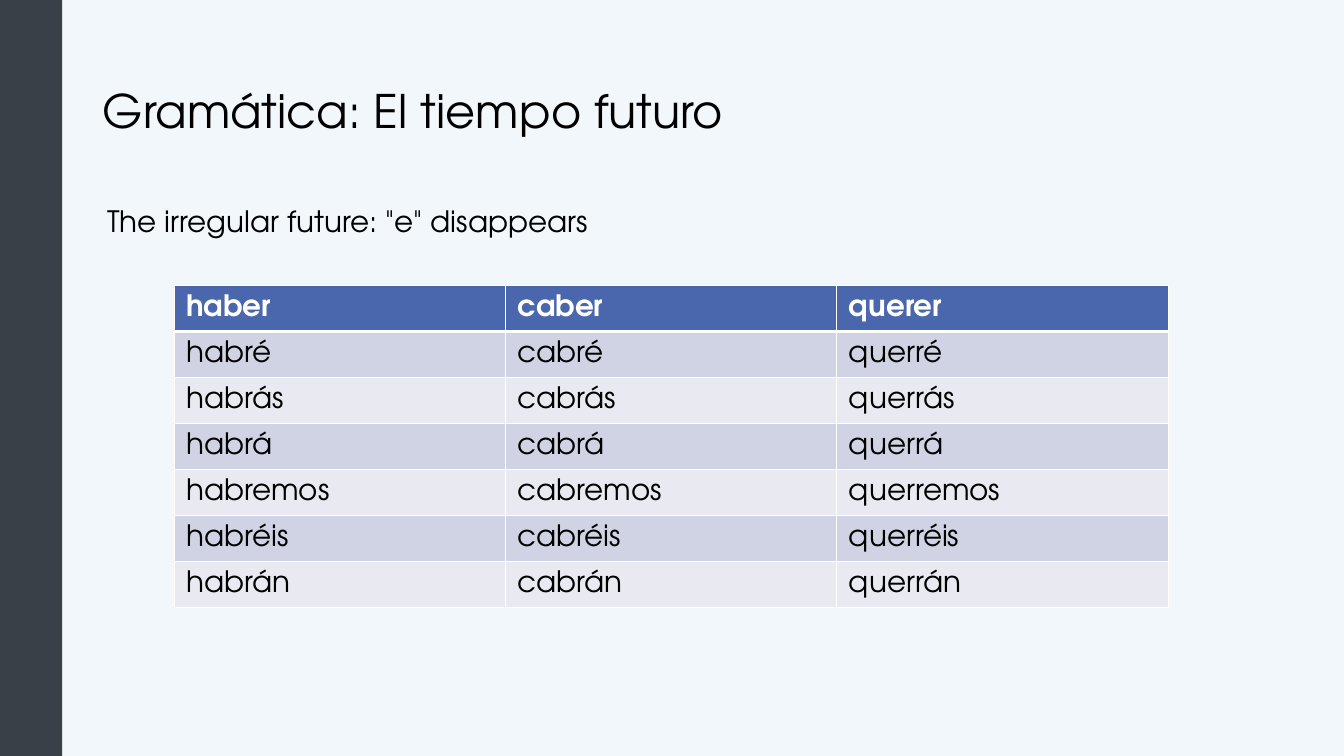
from dataclasses import dataclass

from lxml.etree import SubElement as Sub
from pptx import Presentation
from pptx.dml.color import RGBColor as Rgb
from pptx.enum.shapes import MSO_SHAPE as Kind
from pptx.enum.text import MSO_ANCHOR as Anchor, PP_ALIGN as Align
from pptx.oxml.ns import qn
from pptx.util import Cm, Pt

TITLE = "Gramática: El tiempo futuro"
RULE = 'The irregular future: "e" disappears'
VERBS = [
    ("haber", "caber", "querer"),
    ("habré", "cabré", "querré"),
    ("habrás", "cabrás", "querrás"),
    ("habrá", "cabrá", "querrá"),
    ("habremos", "cabremos", "querremos"),
    ("habréis", "cabréis", "querréis"),
    ("habrán", "cabrán", "querrán"),
]
WIDE, HIGH = 33.87, 19.05
BAR = 1.57
LEFT, SPAN = 2.34, 29.21
GRID = (4.39, 7.19)
COL, ROW = 8.35, 1.16


@dataclass(frozen=True)
class Theme:
    """Colours, font and type sizes."""
    back: str = "F1F7FB"
    bar: str = "3A4047"
    ink: str = "000000"
    light: str = "FFFFFF"
    head: str = "4A66AC"
    bands: tuple = ("E9EAF1", "D0D3E3")
    font: str = "TeX Gyre Adventor"
    big: int = 33
    text: int = 21


LOOK = Theme()


def paint(fill, tone):
    """Give a fill one solid colour."""
    fill.solid()
    fill.fore_color.rgb = Rgb.from_string(tone)


def write(frame, text, size, tone=LOOK.ink, bold=False, pitch=None):
    """Write one run into the first paragraph of a frame."""
    para = frame.paragraphs[0]
    para.alignment = Align.LEFT
    if pitch:
        para.line_spacing = pitch
    run = para.add_run()
    run.text = text
    font = run.font
    font.name, font.size, font.bold = LOOK.font, Pt(size), bold
    font.color.rgb = Rgb.from_string(tone)


def pad(box, side, edge):
    """Set the inner margins of a frame or cell."""
    box.margin_left = box.margin_right = Cm(side)
    box.margin_top = box.margin_bottom = Cm(edge)


def edge(cell, name, width):
    """Add one white border to a cell."""
    line = Sub(cell._tc.get_or_add_tcPr(), qn(f"a:{name}"), w=str(Pt(width)))
    Sub(Sub(line, qn("a:solidFill")), qn("a:srgbClr"), val=LOOK.light)


def add_bar(slide):
    """Add the dark side bar."""
    bar = slide.shapes.add_shape(Kind.RECTANGLE, 0, 0, Cm(BAR), Cm(HIGH))
    bar.shadow.inherit = False
    paint(bar.fill, LOOK.bar)
    bar.line.fill.background()


def add_text(slide):
    """Add the title and the grammar rule."""
    title = slide.shapes.title
    title.left, title.top = Cm(LEFT), Cm(1.02)
    title.width, title.height = Cm(SPAN), Cm(3.68)
    frame = title.text_frame
    frame.vertical_anchor = Anchor.MIDDLE
    pad(frame, 0.25, 0.13)
    write(frame, TITLE, LOOK.big, pitch=0.9)
    rule = slide.shapes.add_textbox(Cm(LEFT), Cm(5.08), Cm(SPAN), Cm(1.5))
    frame = rule.text_frame
    frame.word_wrap = True
    pad(frame, 0.36, 0.13)
    write(frame, RULE, LOOK.text, pitch=0.9)


def add_verbs(slide):
    """Add the table of verb forms."""
    rows, cols = len(VERBS), len(VERBS[0])
    table = slide.shapes.add_table(
        rows, cols, Cm(GRID[0]), Cm(GRID[1]), Cm(cols * COL), Cm(rows * ROW)
    ).table
    for col in table.columns:
        col.width = Cm(COL)
    for r, forms in enumerate(VERBS):
        table.rows[r].height = Cm(ROW)
        top = r == 0
        for c, form in enumerate(forms):
            cell = table.cell(r, c)
            cell.vertical_anchor = Anchor.MIDDLE
            pad(cell, 0.3, 0.13)
            write(cell.text_frame, form, LOOK.text,
                  LOOK.light if top else LOOK.ink, top)
            for name in ("lnL", "lnR", "lnT", "lnB"):
                thick = (r, name) in ((0, "lnB"), (1, "lnT"))
                edge(cell, name, 3 if thick else 1)
            paint(cell.fill, LOOK.head if top else LOOK.bands[r % 2])


def main():
    """Build and save the slide."""
    deck = Presentation()
    deck.slide_width, deck.slide_height = Cm(WIDE), Cm(HIGH)
    slide = deck.slides.add_slide(deck.slide_layouts[5])
    paint(slide.background.fill, LOOK.back)
    add_bar(slide)
    add_text(slide)
    add_verbs(slide)
    deck.save("out.pptx")


if __name__ == "__main__":
    main()
